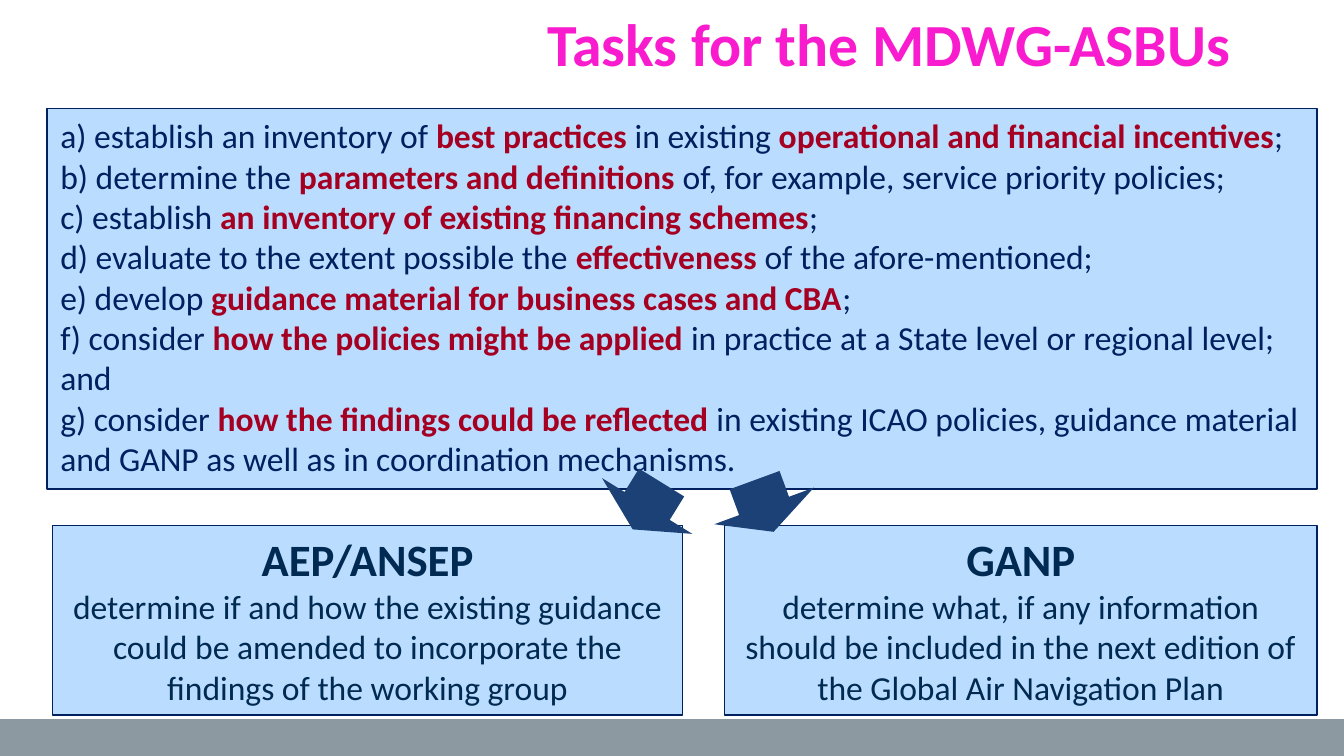
import pptx
import pptx.dml.color
import pptx.enum.shapes
import pptx.enum.text
import pptx.util
from pptx.util import Inches

SLIDE_WIDTH = 10
SLIDE_HEIGHT = SLIDE_WIDTH * 9 / 16
FOOTER_TOP = 5.35

FONT = "Calibri"
PANEL, NAVY, INK, RED = "BADDFF", "002060", "002A52", "A50021"
ARROW, MAGENTA, GREY = "1B4177", "F81CCE", "8C99A1"

# Plain and emphasised words take turns in each task
TASKS = [
    ("a) establish an inventory of ", "best practices ", "in existing ",
     "operational and financial incentives", ";"),
    ("b) determine the ", "parameters and definitions ",
     "of, for example, service priority policies;"),
    ("c) establish ", "an inventory of existing financing schemes", ";"),
    ("d) evaluate to the extent possible the ", "effectiveness ",
     "of the afore-mentioned;"),
    ("e) develop ", "guidance material for business cases and CBA", ";"),
    ("f) consider ", "how the policies might be applied ",
     "in practice at a State level or regional level; and"),
    ("g) consider ", "how the findings could be reflected ",
     "in existing ICAO policies, guidance material and GANP as well as in "
     "coordination mechanisms."),
]

# Left, width, heading, description
OUTCOMES = [
    (5.39, 4.41, "GANP",
     "determine what, if any information should be included in the next "
     "edition of the Global Air Navigation Plan"),
    (0.39, 4.69, "AEP/ANSEP",
     "determine if and how the existing guidance could be amended to "
     "incorporate the findings of the working group"),
]

# Left, rotation
ARROWS = [(5.29, 339.8), (4.42, 31.7)]


def rgb(color):
    return pptx.dml.color.RGBColor.from_string(color)


def style(run, size, color, bold=False):
    run.font.name = FONT
    run.font.size = pptx.util.Pt(size)
    run.font.bold = bold
    run.font.color.rgb = rgb(color)


def add_filled(slide, kind, left, top, width, height, fill):
    shape = slide.shapes.add_shape(
        kind, Inches(left), Inches(top), Inches(width), Inches(height))
    shape.shadow.inherit = False
    shape.fill.solid()
    shape.fill.fore_color.rgb = rgb(fill)
    shape.line.fill.background()
    return shape


def add_panel(slide, left, top, width, height):
    """Add an outlined light blue box and return its text frame."""
    panel = add_filled(slide, pptx.enum.shapes.MSO_SHAPE.RECTANGLE,
                       left, top, width, height, PANEL)
    panel.line.color.rgb = rgb(NAVY)
    panel.line.width = pptx.util.Pt(0.75)
    frame = panel.text_frame
    frame.word_wrap = True
    frame.auto_size = pptx.enum.text.MSO_AUTO_SIZE.SHAPE_TO_FIT_TEXT
    frame.vertical_anchor = pptx.enum.text.MSO_ANCHOR.TOP
    return frame


def add_title(slide, text):
    title = slide.shapes.add_textbox(
        Inches(3.69), Inches(0), Inches(5.85), Inches(0.63))
    frame = title.text_frame
    frame.word_wrap = True
    frame.vertical_anchor = pptx.enum.text.MSO_ANCHOR.MIDDLE
    frame.text = text
    frame.paragraphs[0].alignment = pptx.enum.text.PP_ALIGN.CENTER
    style(frame.paragraphs[0].runs[0], 32, MAGENTA, bold=True)


def add_tasks(slide):
    frame = add_panel(slide, 0.35, 0.81, 9.45, 2.83)
    for number, parts in enumerate(TASKS):
        task = frame.add_paragraph() if number else frame.paragraphs[0]
        task.alignment = pptx.enum.text.PP_ALIGN.LEFT
        for position, words in enumerate(parts):
            run = task.add_run()
            run.text = words
            emphasised = position % 2 == 1
            style(run, 18, RED if emphasised else NAVY, emphasised)


def add_outcome(slide, left, width, heading, description):
    frame = add_panel(slide, left, 3.91, width, 1.41)
    frame.text = f"{heading}\n{description}"
    for paragraph, size in zip(frame.paragraphs, (24, 18)):
        paragraph.alignment = pptx.enum.text.PP_ALIGN.CENTER
        style(paragraph.runs[0], size, INK, bold=size == 24)


def main():
    deck = pptx.Presentation()
    deck.slide_width = Inches(SLIDE_WIDTH)
    deck.slide_height = Inches(SLIDE_HEIGHT)
    slide = deck.slides.add_slide(deck.slide_layouts[6])

    add_filled(slide, pptx.enum.shapes.MSO_SHAPE.RECTANGLE, 0, FOOTER_TOP,
               SLIDE_WIDTH, SLIDE_HEIGHT - FOOTER_TOP, GREY)
    add_title(slide, "Tasks for the MDWG-ASBUs")
    add_tasks(slide)
    for outcome in OUTCOMES:
        add_outcome(slide, *outcome)
    for left, rotation in ARROWS:
        arrow = add_filled(slide, pptx.enum.shapes.MSO_SHAPE.DOWN_ARROW,
                           left, 3.56, 0.79, 0.41, ARROW)
        arrow.rotation = rotation
    deck.save("out.pptx")


if __name__ == "__main__":
    main()
